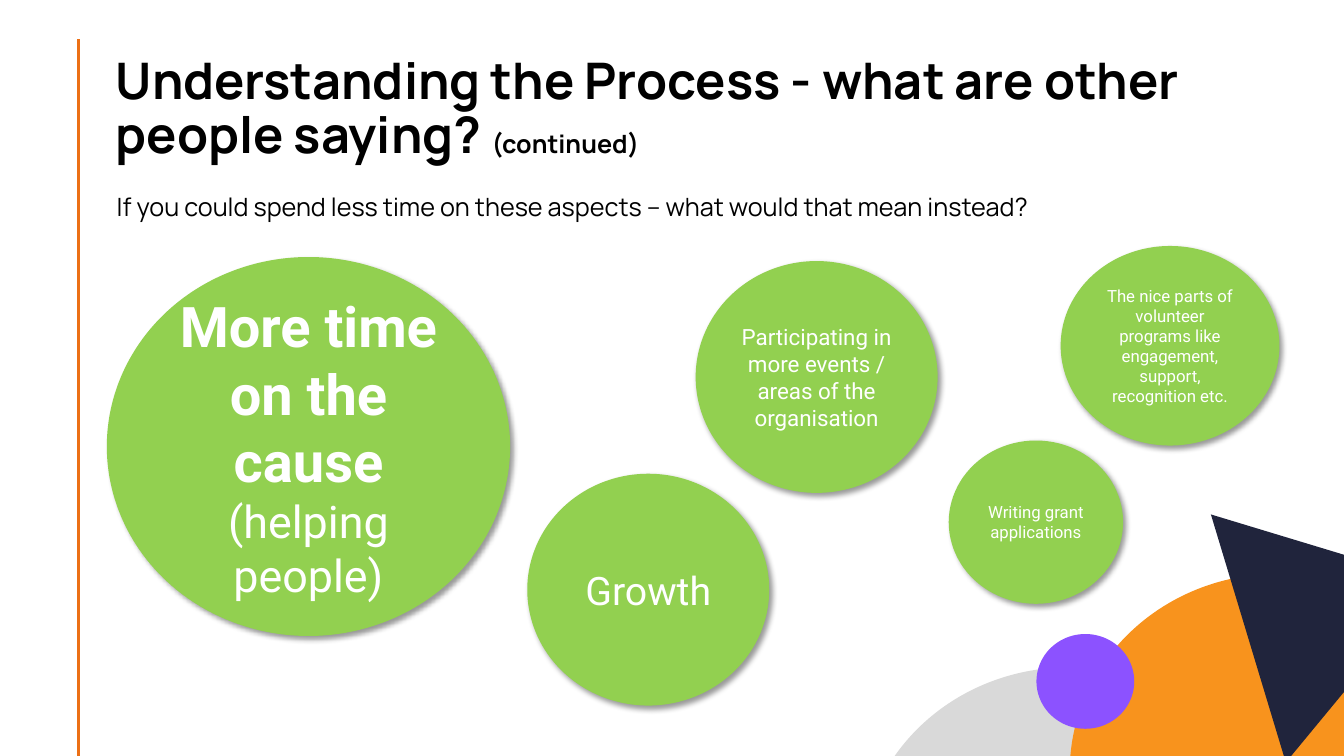
from lxml import etree
from pptx import Presentation
from pptx import util as u
from pptx.dml.color import RGBColor
from pptx.enum import shapes, text
from pptx.oxml.ns import qn

WIDTH, HEIGHT = 13.33, 7.5
GREEN, WHITE, BLACK, RULE = "92D050", "FFFFFF", "000000", "EC7016"
OVAL, TRIANGLE = shapes.MSO_SHAPE.OVAL, shapes.MSO_SHAPE.ISOSCELES_TRIANGLE
LEFT, MIDDLE = text.PP_ALIGN.LEFT, text.MSO_ANCHOR.MIDDLE

TITLE = [("Understanding the Process - what are other people saying? ", 36, True),
         ("(continued)", 18, True)]
QUESTION = [("If you could spend less time on these aspects – what would that mean instead?", 18, False)]
DECORATIONS = [
    (OVAL, (8.53, 6.62, 4.15, 3.92), "D9D9D9", 0),
    (OVAL, (10.61, 5.69, 4.15, 3.92), "F8931D", 0),
    (TRIANGLE, (12.02, 5.09, 2.57, 1.93), "20243C", 73.2),
    (OVAL, (10.28, 6.29, 0.97, 0.94), "8C52FF", 0),
]
ANSWERS = [
    ((1.06, 2.55, 4, 3.76), [("More time on the cause ", 40, True), ("(helping people)", 32, False)]),
    ((6.9, 2.59, 2.4, 2.3), [("Participating in more events / areas of the organisation", 16, False)]),
    ((9.41, 4.37, 1.73, 1.62), [("Writing grant applications", 12, False)]),
    ((5.23, 4.7, 2.4, 2.3), [("Growth", 28, False)]),
    ((10.52, 2.44, 2.17, 1.98),
     [("The nice parts of volunteer programs like engagement, support, recognition etc.", 12, False)]),
]


def color(value):
    """Turn a hex string into a colour."""
    return RGBColor.from_string(value)


def add_filled(slide, kind, box, fill, rotation=0):
    """Add a flat shape without an outline."""
    shape = slide.shapes.add_shape(kind, *map(u.Inches, box))
    shape.shadow.inherit = False
    shape.fill.solid()
    shape.fill.fore_color.rgb = color(fill)
    shape.line.fill.background()
    shape.rotation = rotation
    return shape


def write(shape, runs, font_name, ink, align, anchor):
    """Fill a shape with one wrapped paragraph and return it."""
    frame = shape.text_frame
    frame.word_wrap = True
    frame.vertical_anchor = anchor
    paragraph = frame.paragraphs[0]
    paragraph.alignment = align
    paragraph.font.name = font_name
    paragraph.font.color.rgb = color(ink)
    for words, size, bold in runs:
        run = paragraph.add_run()
        run.text = words
        run.font.size = u.Pt(size)
        run.font.bold = bold
    return paragraph


def add_text(slide, box, runs, anchor, spacing):
    """Add a left-aligned text box with the given line spacing."""
    shape = slide.shapes.add_textbox(*map(u.Inches, box))
    paragraph = write(shape, runs, "Manrope", BLACK, LEFT, anchor)
    paragraph.line_spacing = spacing
    return paragraph


def add_shadow(shape):
    """Give a shape a soft shadow to the lower right."""
    effects = shape._element.spPr.find(qn("a:effectLst"))
    shadow = etree.SubElement(effects, qn("a:outerShdw"), blurRad=str(u.Pt(4)), dist=str(u.Pt(3)),
                              dir=str(45 * 60000), algn="tl", rotWithShape="0")
    tint = etree.SubElement(shadow, qn("a:srgbClr"), val=BLACK)
    etree.SubElement(tint, qn("a:alpha"), val="40000")


def add_rule(slide, x, top, bottom):
    """Add the vertical rule at the left margin."""
    rule = slide.shapes.add_connector(shapes.MSO_CONNECTOR.STRAIGHT,
                                      *map(u.Inches, (x, top, x, bottom)))
    rule.line.color.rgb = color(RULE)
    rule.line.width = u.Pt(2)
    etree.SubElement(rule._element.spPr, qn("a:effectLst"))


def main():
    """Build the slide and save it."""
    presentation = Presentation()
    presentation.slide_width, presentation.slide_height = u.Inches(WIDTH), u.Inches(HEIGHT)
    slide = presentation.slides.add_slide(presentation.slide_layouts[6])
    add_rule(slide, 0.78, 0.39, HEIGHT)
    for decoration in DECORATIONS:
        add_filled(slide, *decoration)
    question = add_text(slide, (1.06, 1.8, 11.46, 0.56), QUESTION, text.MSO_ANCHOR.TOP, 1.18)
    question.space_before = u.Pt(10)
    for box, runs in ANSWERS:
        bubble = add_filled(slide, OVAL, box, GREEN)
        add_shadow(bubble)
        write(bubble, runs, "Roboto", WHITE, text.PP_ALIGN.CENTER, MIDDLE)
    add_text(slide, (1.05, 0.76, 11.64, 0.92), TITLE, text.MSO_ANCHOR.BOTTOM, 0.9)
    presentation.save("out.pptx")


if __name__ == "__main__":
    main()
